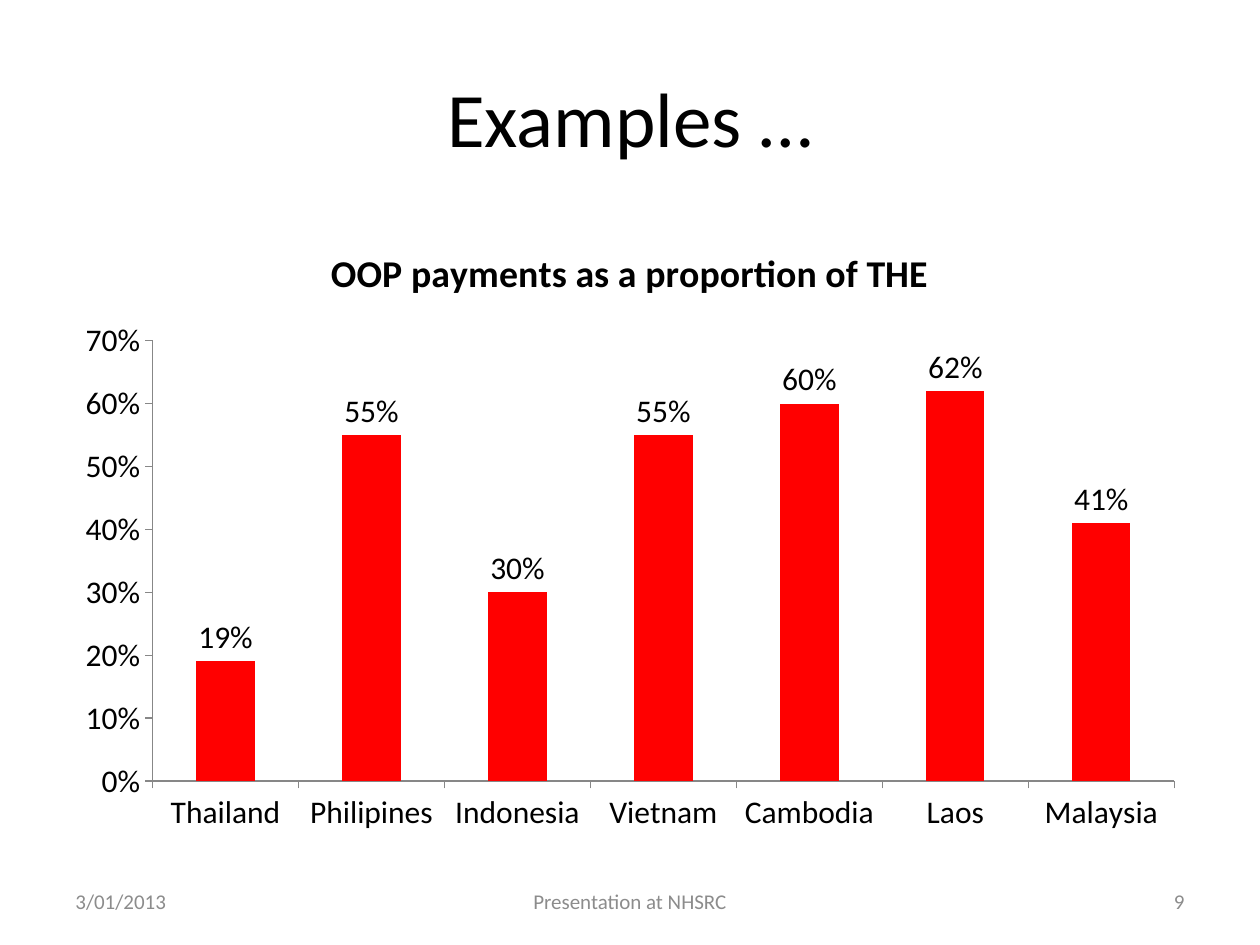
from pptx import Presentation
from pptx.chart.data import CategoryChartData
from pptx.dml.color import RGBColor
from pptx.enum.chart import XL_CHART_TYPE, XL_LABEL_POSITION, XL_TICK_MARK
from pptx.enum.text import MSO_ANCHOR, PP_ALIGN
from pptx.util import Emu, Pt

COLUMNS = XL_CHART_TYPE.COLUMN_CLUSTERED
OUTSIDE_END = XL_LABEL_POSITION.OUTSIDE_END
TICK_OUT = XL_TICK_MARK.OUTSIDE
TICK_NONE = XL_TICK_MARK.NONE
MIDDLE = MSO_ANCHOR.MIDDLE
LEFT, CENTER, RIGHT = PP_ALIGN.LEFT, PP_ALIGN.CENTER, PP_ALIGN.RIGHT

PX_PER_INCH = 126
FONT = "Calibri"
COLORS = {"text": "000000", "muted": "8C8C8C", "axis": "878787", "bar": "FF0000"}
OOP_TITLE = "OOP payments as a proportion of THE"
OOP_SHARES = {
    "Thailand": 0.19,
    "Philipines": 0.55,
    "Indonesia": 0.30,
    "Vietnam": 0.55,
    "Cambodia": 0.60,
    "Laos": 0.62,
    "Malaysia": 0.41,
}


def px(length):
    return Emu(round(length * 914400 / PX_PER_INCH))


def color(name):
    return RGBColor.from_string(COLORS[name])


def style_font(font, size, color_name, bold=False):
    font.name = FONT
    font.size = Pt(size)
    font.bold = bold
    font.color.rgb = color(color_name)


def write_line(frame, text, size, color_name, align):
    frame.word_wrap = True
    frame.vertical_anchor = MIDDLE
    paragraph = frame.paragraphs[0]
    paragraph.text = text
    paragraph.alignment = align
    style_font(paragraph.font, size, color_name)


def place_heading(slide, box):
    heading = slide.shapes.title
    heading.left, heading.top, heading.width, heading.height = map(px, box)
    write_line(heading.text_frame, "Examples …", 44, "text", CENTER)


def style_axis(axis):
    axis.has_major_gridlines = False
    axis.major_tick_mark = TICK_OUT
    axis.minor_tick_mark = TICK_NONE
    axis.format.line.color.rgb = color("axis")
    axis.format.line.width = Pt(0.75)


def place_oop_chart(slide, box):
    shares = CategoryChartData(number_format="0%")
    shares.categories = list(OOP_SHARES)
    shares.add_series(OOP_TITLE, list(OOP_SHARES.values()))
    chart = slide.shapes.add_chart(COLUMNS, *map(px, box), shares).chart
    style_font(chart.font, 18, "text")
    chart.has_legend = False

    chart.has_title = True
    chart.chart_title.include_in_layout = False
    caption = chart.chart_title.text_frame.paragraphs[0]
    caption.text = OOP_TITLE
    style_font(caption.font, 21.6, "text", bold=True)

    style_axis(chart.category_axis)
    style_axis(chart.value_axis)
    chart.value_axis.minimum_scale = 0
    chart.value_axis.maximum_scale = 0.7
    chart.value_axis.major_unit = 0.1
    chart.value_axis.tick_labels.number_format = "0%"
    chart.value_axis.tick_labels.number_format_is_linked = False

    plot = chart.plots[0]
    plot.gap_width = 150
    plot.vary_by_categories = False
    bars = plot.series[0]
    bars.invert_if_negative = False
    bars.format.fill.solid()
    bars.format.fill.fore_color.rgb = color("bar")

    labels = bars.data_labels
    labels.show_value = True
    labels.number_format = "0%"
    labels.number_format_is_linked = False
    labels.position = OUTSIDE_END
    style_font(labels.font, 18, "text")


def place_footer(slide, box):
    left, top, width, height = box
    side, middle = 294, 400
    parts = [
        ("3/01/2013", left, side, LEFT),
        ("Presentation at NHSRC", left + (width - middle) // 2, middle, CENTER),
        ("9", left + width - side, side, RIGHT),
    ]
    for text, part_left, part_width, align in parts:
        part = slide.shapes.add_textbox(*map(px, (part_left, top, part_width, height)))
        write_line(part.text_frame, text, 12, "muted", align)


def main():
    deck = Presentation()
    deck.slide_width, deck.slide_height = px(1260), px(945)
    slide = deck.slides.add_slide(deck.slide_layouts[5])
    margin, width = 63, 1134
    place_heading(slide, (margin, 38, width, 157))
    place_oop_chart(slide, (margin, 220, width, 624))
    place_footer(slide, (margin, 876, width, 50))
    deck.save("out.pptx")


if __name__ == "__main__":
    main()
